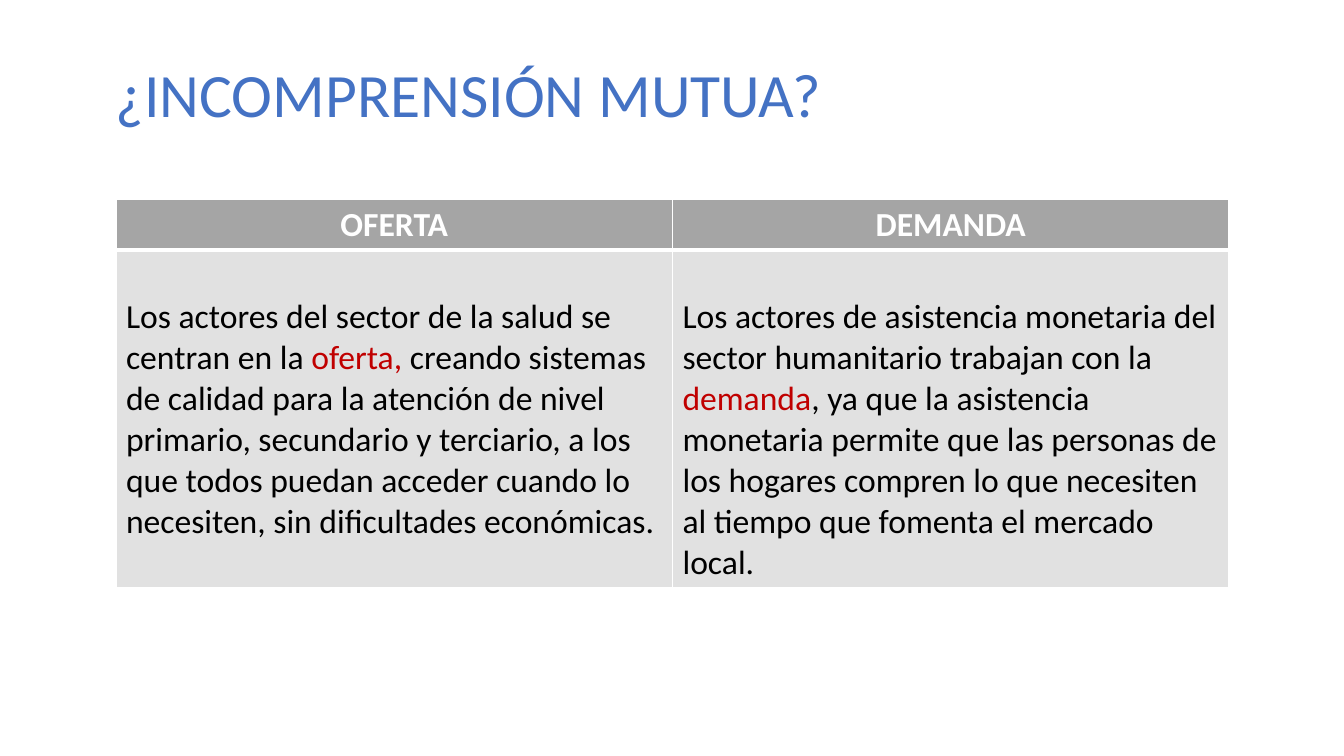
from lxml.etree import SubElement
from pptx import Presentation
from pptx.dml.color import RGBColor
from pptx.enum.text import MSO_ANCHOR, PP_ALIGN
from pptx.oxml.ns import qn
from pptx.util import Inches, Pt

TITLE = "¿INCOMPRENSIÓN MUTUA?"
HEADERS = ["OFERTA", "DEMANDA"]
# Each body text: before the key word, key word, after it
BODIES = [
    ("Los actores del sector de la salud se centran en la ",
     "oferta, ",
     "creando sistemas de calidad para la atención de nivel primario, "
     "secundario y terciario, a los que todos puedan acceder cuando lo "
     "necesiten, sin dificultades económicas."),
    ("Los actores de asistencia monetaria del sector humanitario trabajan con la ",
     "demanda",
     ", ya que la asistencia monetaria permite que las personas de los hogares "
     "compren lo que necesiten al tiempo que fomenta el mercado local."),
]
THEME = {
    "font": "Calibri", "title_size": 44, "table_size": 24,
    "title": "4472C4", "header": "FFFFFF", "text": "000000", "key": "C00000",
    "header_fill": "A5A5A5", "body_fill": "E1E1E1", "border": "FFFFFF",
}
TITLE_AT = (1.05, 0.47, 10.93, 0.99)
TABLE_LEFT, TABLE_TOP, COLUMN_WIDTH = 1.15, 1.98, 5.52
ROW_HEIGHTS = (0.5, 3.35)
BODY_TOP_MARGIN = 0.46


def add_span(para, text, color, size, bold=False):
    span = para.add_run()
    span.text = text
    formats = {"name": THEME["font"], "size": Pt(THEME[size]), "bold": bold}
    for name, value in formats.items():
        setattr(span.font, name, value)
    span.font.color.rgb = RGBColor.from_string(THEME[color])


def style_cell(cell, fill, bottom_width):
    """Give the cell white borders and a solid fill."""
    properties = cell._tc.get_or_add_tcPr()
    widths = {"a:lnL": 1, "a:lnR": 1, "a:lnT": 1, "a:lnB": bottom_width}
    for tag, width in widths.items():
        line = SubElement(properties, qn(tag), w=str(Pt(width)))
        solid = SubElement(line, qn("a:solidFill"))
        SubElement(solid, qn("a:srgbClr"), val=THEME["border"])
    cell.fill.solid()
    cell.fill.fore_color.rgb = RGBColor.from_string(THEME[fill])


def add_title(page):
    box = page.shapes.add_textbox(*map(Inches, TITLE_AT))
    frame = box.text_frame
    frame.word_wrap = True
    frame.vertical_anchor = MSO_ANCHOR.MIDDLE
    para = frame.paragraphs[0]
    para.line_spacing = 0.9
    add_span(para, TITLE, "title", "title_size")


def add_comparison(page):
    size = (COLUMN_WIDTH * len(HEADERS), sum(ROW_HEIGHTS))
    table = page.shapes.add_table(
        len(ROW_HEIGHTS), len(HEADERS),
        *map(Inches, (TABLE_LEFT, TABLE_TOP, *size))).table
    for row, height in zip(table.rows, ROW_HEIGHTS):
        row.height = Inches(height)
    for index, (header, body) in enumerate(zip(HEADERS, BODIES)):
        table.columns[index].width = Inches(COLUMN_WIDTH)
        head_cell, body_cell = table.cell(0, index), table.cell(1, index)
        style_cell(head_cell, "header_fill", 3)
        para = head_cell.text_frame.paragraphs[0]
        para.alignment = PP_ALIGN.CENTER
        add_span(para, header, "header", "table_size", bold=True)

        style_cell(body_cell, "body_fill", 1)
        body_cell.margin_top = Inches(BODY_TOP_MARGIN)
        para = body_cell.text_frame.paragraphs[0]
        for text, color in zip(body, ("text", "key", "text")):
            add_span(para, text, color, "table_size")


def main():
    deck = Presentation()
    deck.slide_width, deck.slide_height = Inches(13.33), Inches(7.5)
    page = deck.slides.add_slide(deck.slide_layouts[6])
    add_title(page)
    add_comparison(page)
    deck.save("out.pptx")


if __name__ == "__main__":
    main()
